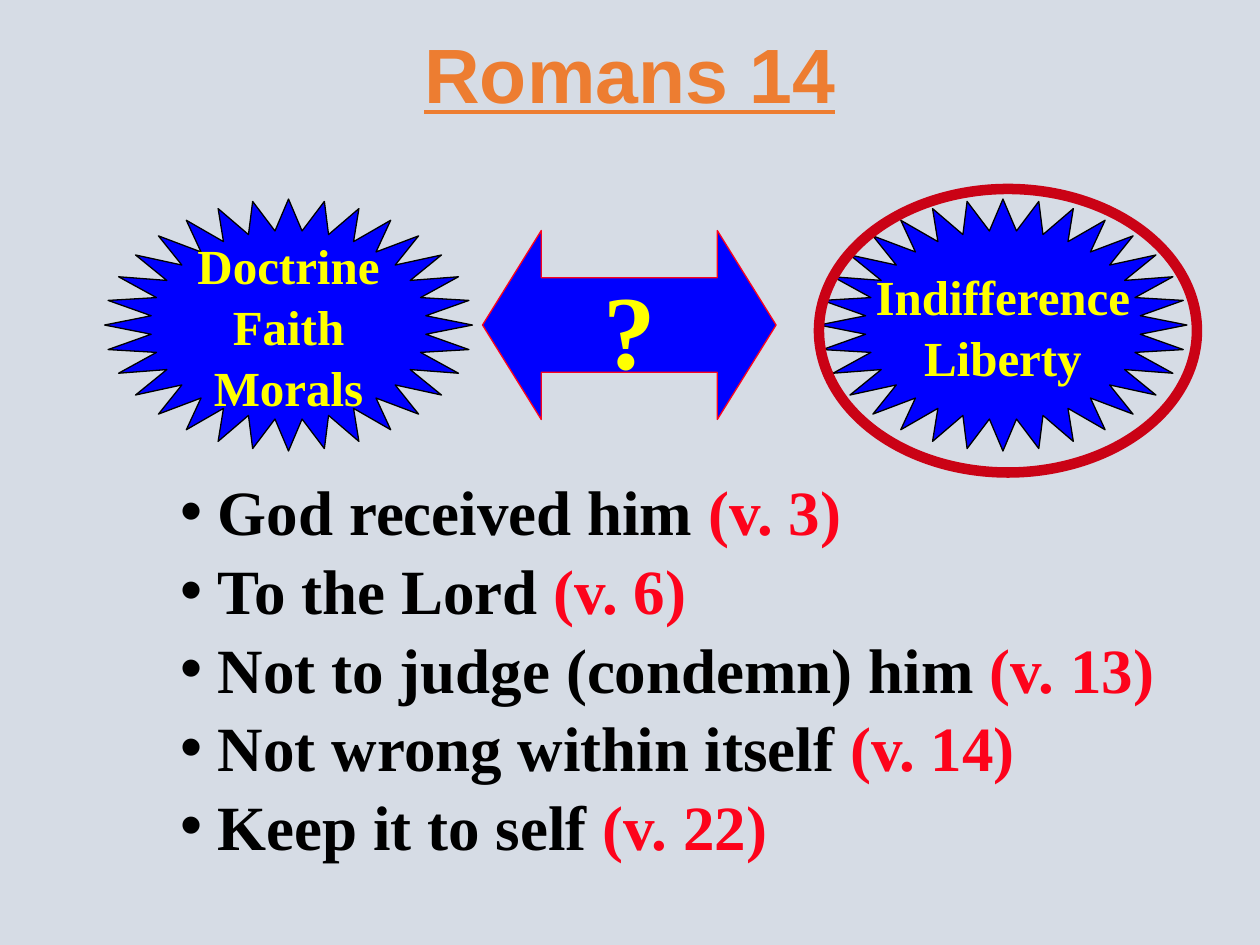
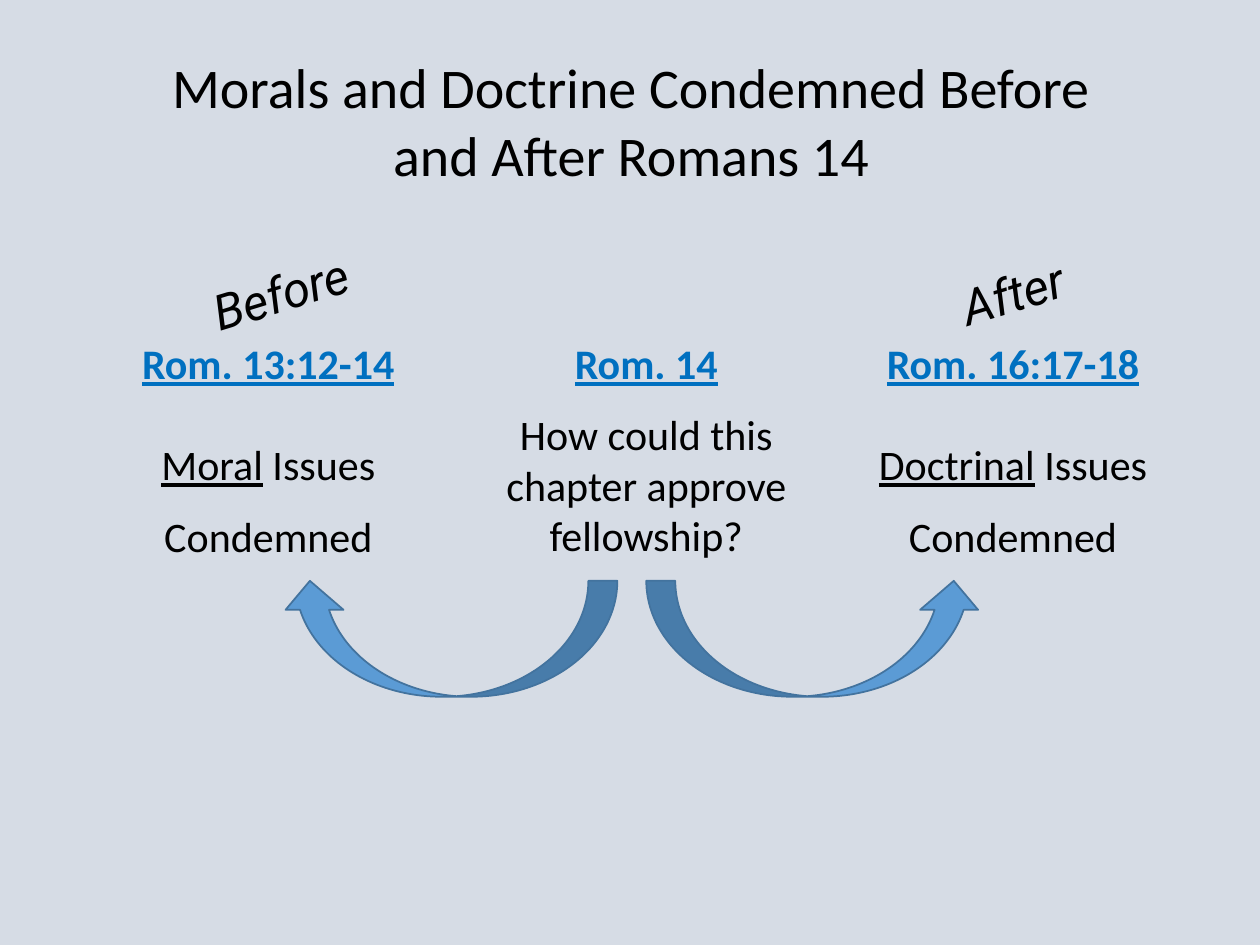
"""Build two slides on Romans 14 and the passages around it."""
from dataclasses import dataclass

from pptx import Presentation
from pptx import util as u
from pptx.dml.color import RGBColor
from pptx.enum import shapes, text

PX = 9144
BACKGROUND = "D6DCE5"
BLACK = "000000"
BLUE = "0000FF"
YELLOW = "FFFF00"
RED = "FD031B"
ORANGE = "ED7D31"
LINK_BLUE = "0070C0"
SERIF = "Times New Roman"
SANS = "Calibri"
SERIF_SPACING = 1.04
SYMBOL = shapes.MSO_SHAPE


@dataclass(frozen=True)
class Box:
    left: int
    top: int
    width: int
    height: int

    def emu(self) -> tuple[int, ...]:
        return tuple(side * PX for side in (self.left, self.top, self.width, self.height))


@dataclass(frozen=True)
class Run:
    words: str
    color: str = BLACK
    bold: bool = False
    underline: bool = False


@dataclass(frozen=True)
class Line:
    runs: tuple[Run, ...]
    before: int = 0


@dataclass(frozen=True)
class Figure:
    kind: int
    box: Box
    fill: str | None
    outline: str
    weight: float
    words: tuple[str, ...] = ()
    size: int = 28
    flipped: bool = False


@dataclass(frozen=True)
class Column:
    left: int
    lines: tuple[Line, ...]


def rgb(value: str) -> RGBColor:
    return RGBColor.from_string(value)


def write(frame, lines, *, size: int, font: str = SANS, italic: bool = False,
          align=text.PP_ALIGN.CENTER, anchor=text.MSO_ANCHOR.TOP,
          spacing: float = 1.0, wrap: bool = True, hanging: int = 0) -> None:
    frame.auto_size = text.MSO_AUTO_SIZE.NONE
    frame.word_wrap = wrap
    frame.vertical_anchor = anchor
    for index, line in enumerate(lines):
        paragraph = frame.add_paragraph() if index else frame.paragraphs[0]
        if hanging:
            properties = paragraph._p.get_or_add_pPr()
            properties.set("marL", str(hanging * PX))
            properties.set("indent", str(-hanging * PX))
        paragraph.alignment = align
        paragraph.line_spacing = spacing
        paragraph.space_before = u.Pt(line.before)
        for part in line.runs:
            run = paragraph.add_run()
            run.text = part.words
            run.font.name = font
            run.font.size = u.Pt(size)
            run.font.italic = italic
            run.font.bold = part.bold
            run.font.underline = part.underline
            run.font.color.rgb = rgb(part.color)


def place(shape, box: Box) -> None:
    shape.left, shape.top, shape.width, shape.height = box.emu()


def add_title(slide, box: Box, run: Run, **style) -> None:
    place(slide.shapes.title, box)
    write(slide.shapes.title.text_frame, [Line((run,))], **style)


def add_text(slide, box: Box, lines, rotation: int = 0, **style) -> None:
    shape = slide.shapes.add_textbox(*box.emu())
    shape.rotation = rotation
    write(shape.text_frame, lines, **style)


def add_figure(slide, figure: Figure) -> None:
    shape = slide.shapes.add_shape(figure.kind, *figure.box.emu())
    shape.shadow.inherit = False
    if figure.fill:
        shape.fill.solid()
        shape.fill.fore_color.rgb = rgb(figure.fill)
    else:
        shape.fill.background()
    shape.line.color.rgb = rgb(figure.outline)
    shape.line.width = u.Pt(figure.weight)
    if figure.flipped:
        shape._element.spPr.get_or_add_xfrm().set("flipH", "1")
    if figure.kind == SYMBOL.LEFT_RIGHT_ARROW:
        shape.adjustments[1] = 0.311
    if figure.words:
        lines = [Line((Run(words, YELLOW, bold=True),)) for words in figure.words]
        write(shape.text_frame, lines, size=figure.size, font=SERIF, wrap=False,
              anchor=text.MSO_ANCHOR.MIDDLE, spacing=SERIF_SPACING)


def build_liberty_slide(presentation) -> None:
    slide = presentation.slides.add_slide(presentation.slide_layouts[1])
    add_title(slide, Box(75, 0, 850, 125), Run("Romans 14", ORANGE, True, True),
              size=44, font="Arial", spacing=0.9, anchor=text.MSO_ANCHOR.MIDDLE)
    figures = (
        Figure(SYMBOL.STAR_32_POINT, Box(83, 158, 292, 200), BLUE, BLACK, 0.75,
               ("Doctrine", "Faith", "Morals")),
        Figure(SYMBOL.STAR_32_POINT, Box(650, 158, 292, 200), BLUE, BLACK, 0.75,
               ("Indifference", "Liberty")),
        Figure(SYMBOL.LEFT_RIGHT_ARROW, Box(383, 183, 233, 150), BLUE, RED, 0.75,
               ("?",), 60),
        Figure(SYMBOL.OVAL, Box(650, 150, 300, 225), None, "CA0215", 6),
    )
    for figure in figures:
        add_figure(slide, figure)
    points = (
        ("God received him ", 3),
        ("To the Lord ", 6),
        ("Not to judge (condemn) him ", 13),
        ("Not wrong within itself ", 14),
        ("Keep it to self ", 22),
    )
    lines = [Line((Run(point, bold=True), Run(f"(v. {verse})", RED, True)))
             for point, verse in points]
    body = slide.placeholders[1]
    place(body, Box(133, 368, 830, 310))
    write(body.text_frame, lines, size=36, font=SERIF, spacing=SERIF_SPACING,
          align=text.PP_ALIGN.LEFT, hanging=30)


def passage(reference: str) -> Line:
    return Line((Run(reference, LINK_BLUE, True, True),))


def condemned(reference: str, topic: str) -> tuple[Line, ...]:
    return (
        passage(reference),
        Line((Run(topic, underline=True), Run(" Issues")), 29),
        Line((Run("Condemned"),), 12),
    )


def build_context_slide(presentation) -> None:
    slide = presentation.slides.add_slide(presentation.slide_layouts[5])
    add_title(slide, Box(99, 37, 804, 118),
              Run("Morals and Doctrine Condemned Before and After Romans 14"), size=32)
    question = Line((Run("How could this chapter approve fellowship?"),), 12)
    columns = (
        Column(86, condemned("Rom. 13:12-14", "Moral")),
        Column(677, condemned("Rom. 16:17-18", "Doctrinal")),
        Column(386, (passage("Rom. 14"), question)),
    )
    for column in columns:
        add_text(slide, Box(column.left, 263, 254, 188), column.lines, size=24)
    for heading, left in (("Before", 78), ("After", 659)):
        add_text(slide, Box(left, 204, 289, 57), [Line((Run(heading),))], rotation=343,
                 size=28, font="Roboto", italic=True)
    for left, flipped in ((513, False), (223, True)):
        add_figure(slide, Figure(SYMBOL.CURVED_UP_ARROW, Box(left, 461, 267, 92),
                                 "5B9BD5", "43739E", 1, flipped=flipped))


def main() -> None:
    presentation = Presentation()
    presentation.slide_width = 1000 * PX
    presentation.slide_height = 750 * PX
    background = presentation.slide_master.background.fill
    background.solid()
    background.fore_color.rgb = rgb(BACKGROUND)
    build_liberty_slide(presentation)
    build_context_slide(presentation)
    presentation.save("out.pptx")


if __name__ == "__main__":
    main()
